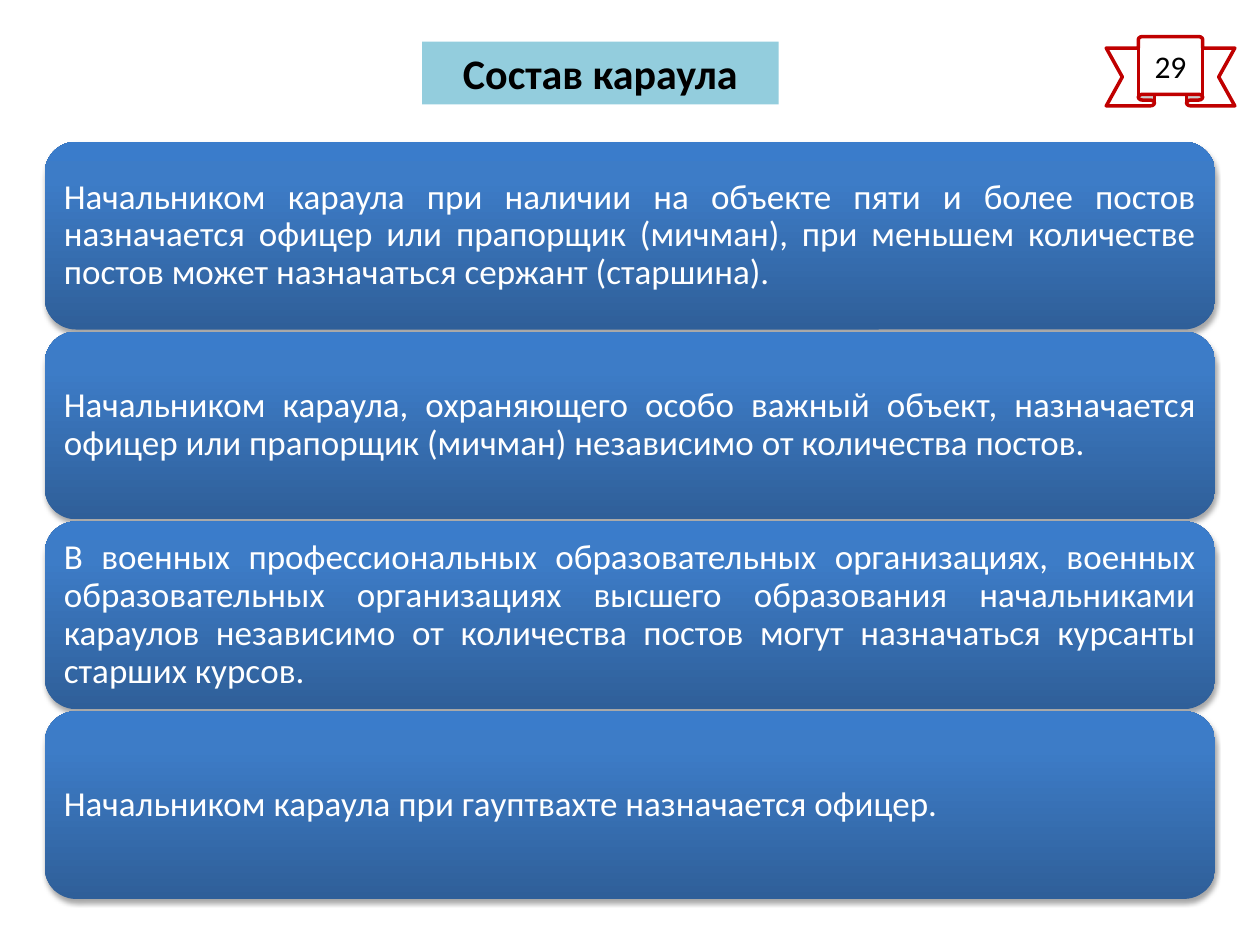
from dataclasses import dataclass

from lxml.etree import SubElement
from pptx import Presentation
from pptx.dml.color import RGBColor
from pptx.enum.shapes import MSO_SHAPE as Preset
from pptx.enum.text import MSO_ANCHOR as Anchor, PP_ALIGN as Align
from pptx.oxml.ns import qn
from pptx.util import Inches, Pt

COLUMN = ROW = Inches(0.1)
FONT = "Calibri"
COLORS = {
    "white": "FFFFFF",
    "black": "000000",
    "red": "C00000",
    "aqua": "93CDDD",
}
PANEL_STOPS = [(0, "2F5F99"), (80, "3D7CC7"), (100, "3A7CCB")]
RULES = [
    "Начальником караула при наличии на объекте пяти и более постов назначается "
    "офицер или прапорщик (мичман), при меньшем количестве постов может "
    "назначаться сержант (старшина).",
    "Начальником караула, охраняющего особо важный объект, назначается офицер "
    "или прапорщик (мичман) независимо от количества постов.",
    "В военных профессиональных образовательных организациях, военных "
    "образовательных организациях высшего образования начальниками караулов "
    "независимо от количества постов могут назначаться курсанты старших курсов.",
    "Начальником караула при гауптвахте назначается офицер.",
]


@dataclass
class Box:
    left: float
    top: float
    width: float
    height: float

    def inset(self, gap):
        return Box(self.left + gap, self.top + gap,
                   self.width - 2 * gap, self.height - 2 * gap)

    def lengths(self):
        return (int(self.left * COLUMN), int(self.top * ROW),
                int(self.width * COLUMN), int(self.height * ROW))


def color(name):
    return RGBColor.from_string(COLORS[name])


def add_preset(shapes, preset, box):
    shape = shapes.add_shape(preset, *box.lengths())
    shape.shadow.inherit = False
    shape.line.fill.background()
    return shape


def write(shape, text, size, ink, align, bold=False):
    frame = shape.text_frame
    frame.word_wrap = True
    frame.vertical_anchor = Anchor.MIDDLE
    para = frame.paragraphs[0]
    para.text = text
    para.alignment = align
    para.font.name = FONT
    para.font.size = Pt(size)
    para.font.bold = bold
    para.font.color.rgb = color(ink)
    return frame, para


def add_color_node(parent, value):
    return SubElement(parent, qn("a:srgbClr"), val=value)


def shade_panel(panel):
    panel.fill.gradient()
    panel.fill.gradient_angle = 90
    properties = panel._element.spPr
    stops = properties.find(".//" + qn("a:gsLst"))
    for stop in list(stops):
        stops.remove(stop)
    for share, value in PANEL_STOPS:
        add_color_node(SubElement(stops, qn("a:gs"), pos=str(share * 1000)), value)
    shadow = SubElement(properties.find(qn("a:effectLst")), qn("a:outerShdw"),
                        blurRad=str(Pt(3.1)), dist=str(Pt(1.8)),
                        dir="5400000", rotWithShape="0")
    SubElement(add_color_node(shadow, COLORS["black"]), qn("a:alpha"), val="35000")


def add_number_ribbon(page, box, number):
    ribbon = add_preset(page.shapes, Preset.UP_RIBBON, box)
    ribbon.fill.solid()
    ribbon.fill.fore_color.rgb = color("white")
    ribbon.line.color.rgb = color("red")
    ribbon.line.width = Pt(2)
    write(ribbon, number, 18, "black", Align.CENTER)


def add_heading(page, box, text):
    heading = add_preset(page.shapes, Preset.RECTANGLE, box)
    heading.fill.solid()
    heading.fill.fore_color.rgb = color("aqua")
    write(heading, text, 24, "black", Align.CENTER, bold=True)


def add_rule(shapes, box, text):
    shade_panel(add_preset(shapes, Preset.ROUNDED_RECTANGLE, box))
    label = shapes.add_textbox(*box.inset(0.72).lengths())
    frame, para = write(label, text, 20, "white", Align.JUSTIFY)
    frame.margin_left = frame.margin_right = Inches(0.08)
    frame.margin_top = frame.margin_bottom = Inches(0.08)
    para.line_spacing = 0.9
    para.space_after = Pt(7)


def add_rule_stack(page, box, rules, gap):
    shapes = page.shapes.add_group_shape().shapes
    height = (box.height - gap * (len(rules) - 1)) / len(rules)
    for index, text in enumerate(rules):
        top = box.top + index * (height + gap)
        add_rule(shapes, Box(box.left, top, box.width, height), text)


def main():
    deck = Presentation()
    deck.slide_width, deck.slide_height = 100 * COLUMN, 75 * ROW
    page = deck.slides.add_slide(deck.slide_layouts[6])
    add_number_ribbon(page, Box(87.8, 2.9, 10.2, 5.5), "29")
    add_heading(page, Box(33.5, 3.3, 28.3, 5), "Состав караула")
    add_rule_stack(page, Box(3.55, 11.25, 92.9, 60.1), RULES, 0.16)
    deck.save("out.pptx")


if __name__ == "__main__":
    main()
